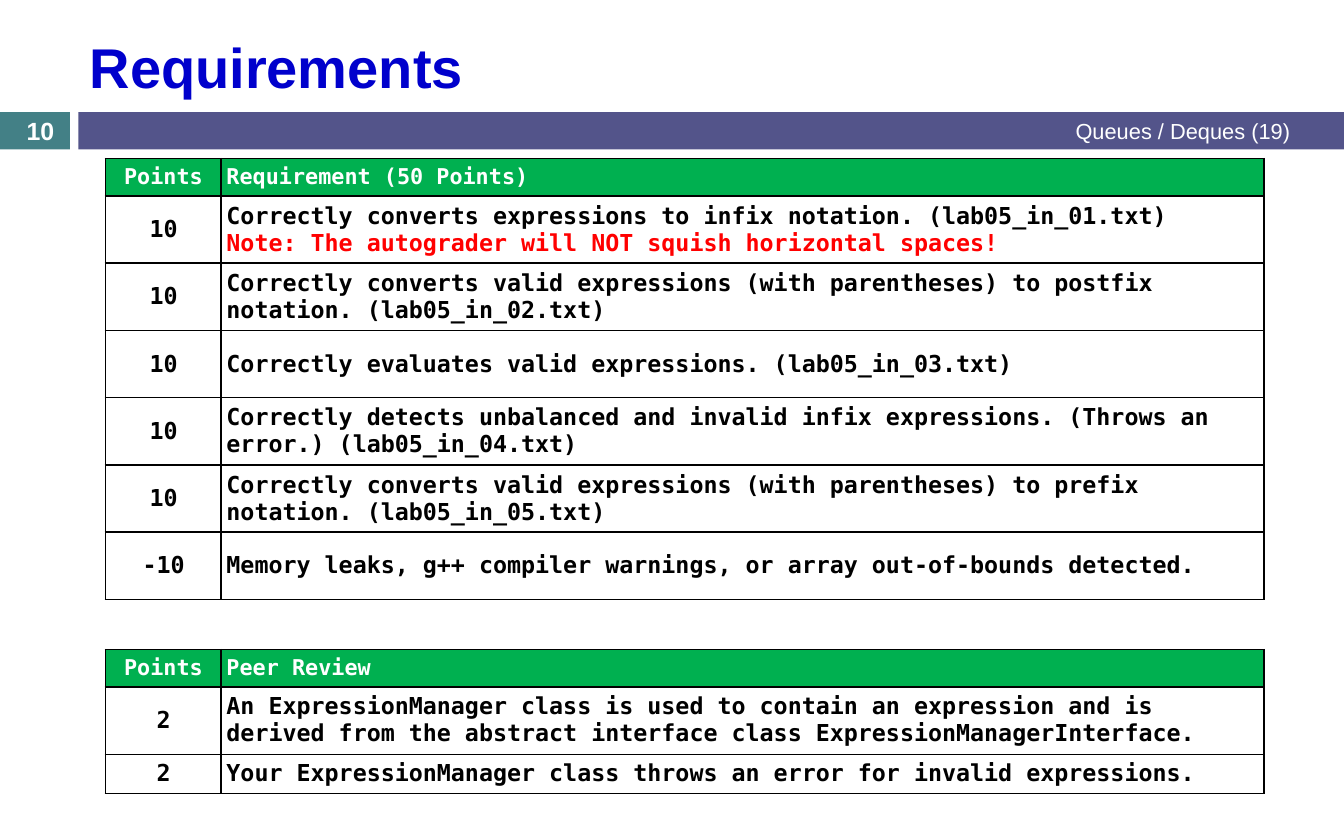
from dataclasses import dataclass

from lxml import etree
from pptx import Presentation
from pptx import util as u
from pptx.dml import color
from pptx.enum import shapes, text
from pptx.oxml import ns

Pt = u.Pt
ALIGN = text.PP_ALIGN
MID = text.MSO_ANCHOR.MIDDLE
TOP = text.MSO_ANCHOR.TOP


@dataclass(frozen=True)
class Theme:
    """Colours, fonts and type sizes."""
    teal: str = "438086"
    plum: str = "53548A"
    blue: str = "0000CC"
    green: str = "00B050"
    red: str = "FF0000"
    black: str = "000000"
    white: str = "FFFFFF"
    sans: str = "Arial"
    mono: str = "DejaVu Sans Mono"
    title: float = 36
    foot: float = 14
    page: float = 16
    head: float = 14
    body: float = 15


@dataclass(frozen=True)
class Box:
    """A place on the slide, in points."""
    left: float
    top: float
    width: float
    height: float

    def emu(self) -> tuple:
        """Return the place as slide lengths."""
        return Pt(self.left), Pt(self.top), Pt(self.width), Pt(self.height)


@dataclass(frozen=True)
class Row:
    """One table row."""
    points: str
    lines: tuple
    height: float
    anchor: int = MID


@dataclass(frozen=True)
class Grid:
    """One points table."""
    top: float
    head: str
    rows: tuple


T = Theme()
LEFT = 67.6
COLS = (74.4, 670.6)
HEAD = 23.8
TALL = 43.2
SLIM = dict(margin_left=Pt(1.44), margin_right=Pt(0.72),
            margin_top=Pt(0.72), margin_bottom=Pt(0.72))
EVEN = {side: Pt(3.6) for side in SLIM}

BARS = ((Box(0, 72, 45, 24), T.teal), (Box(50.4, 72, 813.6, 24), T.plum))
GRIDS = (
    Grid(101.9, "Requirement (50 Points)", (
        Row("10", ("Correctly converts expressions to infix notation. (lab05_in_01.txt)",
                   "Note: The autograder will NOT squish horizontal spaces!"), TALL),
        Row("10", ("Correctly converts valid expressions (with parentheses) to postfix "
                   "notation. (lab05_in_02.txt)",), TALL),
        Row("10", ("Correctly evaluates valid expressions. (lab05_in_03.txt)",), TALL),
        Row("10", ("Correctly detects unbalanced and invalid infix expressions. "
                   "(Throws an error.) (lab05_in_04.txt)",), TALL),
        Row("10", ("Correctly converts valid expressions (with parentheses) to prefix "
                   "notation. (lab05_in_05.txt)",), TALL),
        Row("-10", ("Memory leaks, g++ compiler warnings, or array out-of-bounds "
                    "detected.",), TALL))),
    Grid(417.6, "Peer Review", (
        Row("2", ("An ExpressionManager class is used to contain an expression and is "
                  "derived from the abstract interface class "
                  "ExpressionManagerInterface.",), 41.8, TOP),
        Row("2", ("Your ExpressionManager class throws an error for invalid "
                  "expressions.",), 25, TOP))),
)


def apply(item, values: dict) -> None:
    """Set each named value on an item."""
    for name, value in values.items():
        setattr(item, name, value)


def write(frame, lines: tuple, size: float, tints: tuple, font: str,
          bold: bool = True, align: int = ALIGN.LEFT) -> None:
    """Write one paragraph per line, each in its own colour."""
    for i, (line, tint) in enumerate(zip(lines, tints)):
        para = frame.add_paragraph() if i else frame.paragraphs[0]
        para.alignment = align
        run = para.add_run()
        run.text = line
        apply(run.font, dict(name=font, size=Pt(size), bold=bold))
        run.font.color.rgb = color.RGBColor.from_string(tint)


def paint(fill, tint: str) -> None:
    """Make a fill solid."""
    fill.solid()
    fill.fore_color.rgb = color.RGBColor.from_string(tint)


def bar(slide, box: Box, tint: str) -> None:
    """Draw a plain filled bar."""
    shape = slide.shapes.add_shape(shapes.MSO_SHAPE.RECTANGLE, *box.emu())
    shape.shadow.inherit = False
    paint(shape.fill, tint)
    shape.line.fill.background()


def label(slide, box: Box, words: str, size: float, bold: bool, align: int) -> None:
    """Add a white label on a bar."""
    frame = slide.shapes.add_textbox(*box.emu()).text_frame
    apply(frame, dict(word_wrap=True, vertical_anchor=MID, margin_top=0, margin_bottom=0))
    write(frame, (words,), size, (T.white,), T.sans, bold, align)


def edge(cell) -> None:
    """Give a cell a thin border on all sides."""
    props = cell._tc.get_or_add_tcPr()
    for tag in ("a:lnL", "a:lnR", "a:lnT", "a:lnB"):
        line = etree.SubElement(props, ns.qn(tag), w=str(Pt(1)))
        solid = etree.SubElement(line, ns.qn("a:solidFill"))
        etree.SubElement(solid, ns.qn("a:srgbClr"), val=T.black)


def grid(slide, data: Grid) -> None:
    """Draw a points table with its header row."""
    rows = (Row("Points", (data.head,), HEAD, TOP),) + data.rows
    box = Box(LEFT, data.top, sum(COLS), sum(row.height for row in rows))
    table = slide.shapes.add_table(len(rows), len(COLS), *box.emu()).table
    apply(table, dict(first_row=False, horz_banding=False))
    for col, width in zip(table.columns, COLS):
        col.width = Pt(width)
    for i, row in enumerate(rows):
        table.rows[i].height = Pt(row.height)
        size = T.body if i else T.head
        tints = (T.black, T.red) if i else (T.white,)
        parts = (((row.points,), SLIM, MID, ALIGN.CENTER),
                 (row.lines, EVEN, row.anchor, ALIGN.LEFT))
        for j, (lines, inset, anchor, align) in enumerate(parts):
            cell = table.cell(i, j)
            apply(cell, dict(inset, vertical_anchor=anchor))
            edge(cell)
            if i:
                cell.fill.background()
            else:
                paint(cell.fill, T.green)
            write(cell.text_frame, lines, size, tints, T.mono, align=align)


def main() -> None:
    """Build and save the slide."""
    deck = Presentation()
    apply(deck, dict(slide_width=Pt(864), slide_height=Pt(540)))
    slide = deck.slides.add_slide(deck.slide_layouts[5])
    for box, tint in BARS:
        bar(slide, box, tint)
    title = slide.shapes.title
    apply(title, dict(zip(("left", "top", "width", "height"),
                          Box(50.4, 13.7, 785.5, 57.6).emu())))
    apply(title.text_frame, dict(vertical_anchor=MID, word_wrap=True,
                                 auto_size=text.MSO_AUTO_SIZE.NONE))
    write(title.text_frame, ("Requirements",), T.title, (T.blue,), T.sans)
    label(slide, Box(444.2, 72, 392.4, 24), "Queues / Deques (19)",
          T.foot, False, ALIGN.RIGHT)
    label(slide, Box(0, 73, 51.8, 22), "10", T.page, True, ALIGN.CENTER)
    for data in GRIDS:
        grid(slide, data)
    deck.save("out.pptx")


if __name__ == "__main__":
    main()
